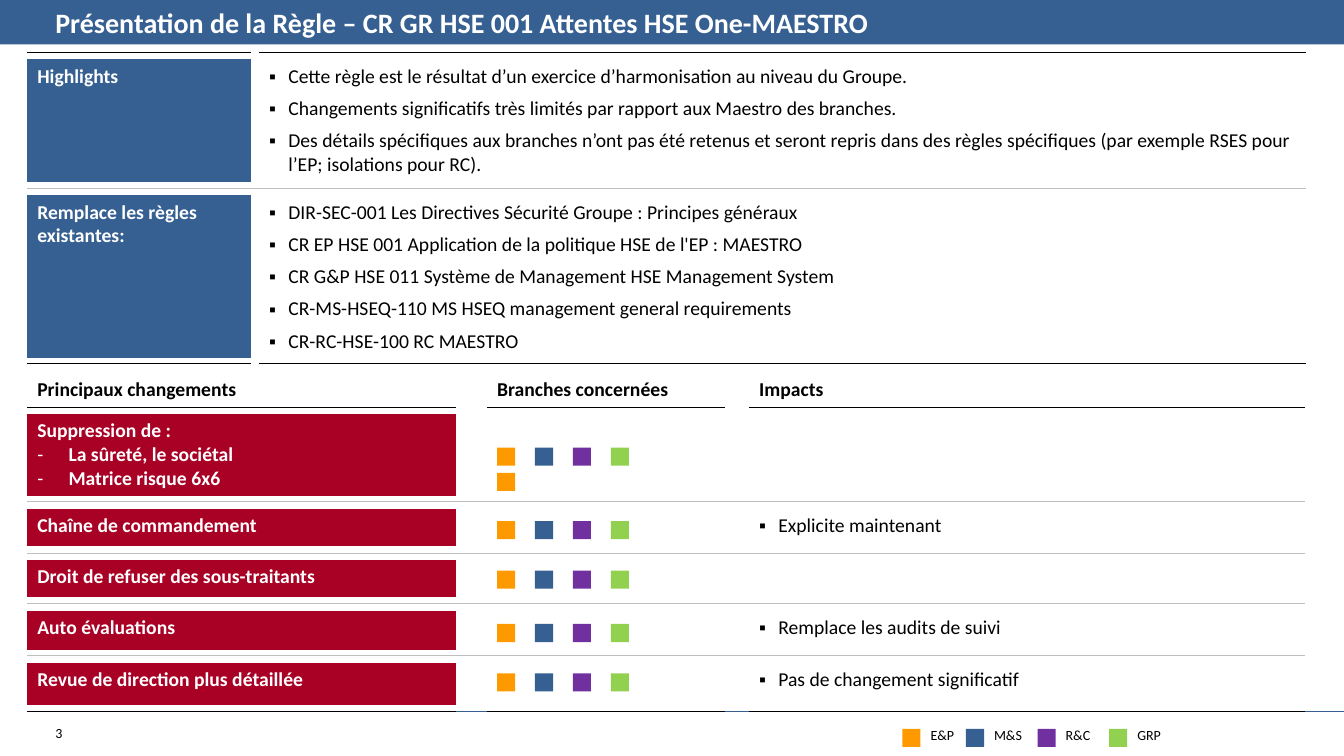
from dataclasses import dataclass, field

import pptx
import pptx.dml.color
import pptx.enum.shapes
import pptx.enum.text
import pptx.oxml.ns
import pptx.util
from lxml import etree

RGB = pptx.dml.color.RGBColor
ANCHOR = pptx.enum.text.MSO_ANCHOR
BLACK = RGB(0x00, 0x00, 0x00)
WHITE = RGB(0xFF, 0xFF, 0xFF)
GREY = RGB(0xBF, 0xBF, 0xBF)
BLUE = RGB(0x37, 0x60, 0x92)
RED = RGB(0xA9, 0x00, 0x25)
ORANGE = RGB(0xFF, 0x99, 0x00)
PURPLE = RGB(0x70, 0x30, 0xA0)
GREEN = RGB(0x92, 0xD0, 0x50)

FONT = "Calibri"
PLAIN_STYLE = "{2D5ABB26-0587-4C30-8999-92F81FD0307C}"
GRID_COLS, GRID_ROWS = 1333, 750
SLIDE_W, SLIDE_H = pptx.util.Inches(13.33), pptx.util.Inches(7.5)
SQUARE, SQUARE_PITCH, SQUARES_LEFT = 18, 37.6, 493
LABEL_OFFSET = 28


@dataclass(frozen=True)
class Bullet:
    indent: float
    space_after: float
    font: str


@dataclass(frozen=True)
class Entry:
    text: str
    fill: RGB | None = None
    color: RGB = BLACK
    bold: bool = False
    anchor: ANCHOR = ANCHOR.TOP


@dataclass(frozen=True)
class Rule:
    """A horizontal line above a row, over the given columns."""
    color: RGB
    cols: tuple[int, ...]


@dataclass
class Grid:
    left: float
    top: float
    cols: list[float]
    rows: list[float]
    entries: dict[tuple[int, int], Entry]
    rules: dict[int, Rule] = field(default_factory=dict)


@dataclass(frozen=True)
class Branch:
    name: str
    color: RGB
    legend_left: float
    label_width: float


BULLETS = {"-": Bullet(0.31, 0, FONT), "▪": Bullet(0.19, 6, "Arial")}

BRANCHES = [
    Branch("E&P", ORANGE, 895, 26),
    Branch("M&S", BLUE, 958, 30),
    Branch("R&C", PURPLE, 1029, 27),
    Branch("GRP", GREEN, 1100, 27),
]
BRANCH_ROWS = [444, 517, 566, 619, 668]


def heading(text: str, fill: RGB) -> Entry:
    return Entry(text, fill, WHITE, True)


def column_title(text: str) -> Entry:
    return Entry(text, bold=True, anchor=ANCHOR.BOTTOM)


OVERVIEW = Grid(
    27, 52, [222, 8, 1038], [7, 122, 6, 7, 161, 6],
    {
        (1, 0): heading("Highlights", BLUE),
        (1, 2): Entry(
            "▪ Cette règle est le résultat d’un exercice d’harmonisation au niveau du Groupe.\n"
            "▪ Changements significatifs très limités par rapport aux Maestro des branches.\n"
            "▪ Des détails spécifiques aux branches n’ont pas été retenus et seront repris "
            "dans des règles spécifiques (par exemple RSES pour l’EP; isolations pour RC)."),
        (4, 0): heading("Remplace les règles existantes:", BLUE),
        (4, 2): Entry(
            "▪ DIR-SEC-001 Les Directives Sécurité Groupe : Principes généraux\n"
            "▪ CR EP HSE 001 Application de la politique HSE de l'EP : MAESTRO\n"
            "▪ CR G&P HSE 011 Système de Management HSE Management System\n"
            "▪ CR-MS-HSEQ-110 MS HSEQ management general requirements\n"
            "▪ CR-RC-HSE-100 RC MAESTRO"),
    },
    {0: Rule(BLACK, (0, 2)), 3: Rule(GREY, (0, 1, 2)), 6: Rule(BLACK, (0, 2))},
)

CHANGES = Grid(
    27, 367, [425, 31, 236, 24, 551],
    [37, 7, 81, 6, 7, 37, 7, 7, 37, 6, 7, 39, 6, 7, 42, 6],
    {
        (0, 0): column_title("Principaux changements"),
        (0, 2): column_title("Branches concernées"),
        (0, 4): column_title("Impacts"),
        (2, 0): heading("Suppression de :\n- La sûreté, le sociétal\n- Matrice risque 6x6", RED),
        (5, 0): heading("Chaîne de commandement", RED),
        (5, 4): Entry("▪ Explicite maintenant"),
        (8, 0): heading("Droit de refuser des sous-traitants", RED),
        (11, 0): heading("Auto évaluations", RED),
        (11, 4): Entry("▪ Remplace les audits de suivi"),
        (14, 0): heading("Revue de direction plus détaillée", RED),
        (14, 4): Entry("▪ Pas de changement significatif"),
    },
    {edge: Rule(BLACK, (0, 2, 4)) for edge in (1, 16)}
    | {edge: Rule(GREY, tuple(range(5))) for edge in (4, 7, 10, 13)},
)


def across(n: float) -> int:
    return round(SLIDE_W * n / GRID_COLS)


def down(n: float) -> int:
    return round(SLIDE_H * n / GRID_ROWS)


def box(left: float, top: float, width: float, height: float) -> tuple[int, int, int, int]:
    return across(left), down(top), across(width), down(height)


def add_xml(parent, tag: str, **attrs: str):
    return etree.SubElement(parent, pptx.oxml.ns.qn(tag), attrs)


def write(tf, text: str, *, size: float = 14, color: RGB = BLACK, bold: bool = False) -> None:
    """Write one paragraph a line; a leading mark makes it a bullet."""
    for i, line in enumerate(text.split("\n")):
        p = tf.add_paragraph() if i else tf.paragraphs[0]
        mark, _, rest = line.partition(" ")
        if mark in BULLETS:
            bullet, line = BULLETS[mark], rest
            p.space_after = pptx.util.Pt(bullet.space_after)
            pPr = p._p.get_or_add_pPr()
            indent = pptx.util.Inches(bullet.indent)
            pPr.set("marL", str(indent))
            pPr.set("indent", str(-indent))
            add_xml(pPr, "a:buFont", typeface=bullet.font)
            add_xml(pPr, "a:buChar", char=mark)
        r = p.add_run()
        r.text = line
        r.font.name, r.font.size = FONT, pptx.util.Pt(size)
        r.font.bold, r.font.color.rgb = bold, color


def add_text(shapes, text: str, place: tuple[int, int, int, int], *, inset: bool = True,
             anchor: ANCHOR = ANCHOR.TOP, **style) -> None:
    tf = shapes.add_textbox(*place).text_frame
    tf.word_wrap, tf.vertical_anchor = True, anchor
    if not inset:
        tf.margin_left = tf.margin_right = tf.margin_top = tf.margin_bottom = 0
    write(tf, text, **style)


def add_rect(shapes, place: tuple[int, int, int, int], color: RGB) -> None:
    s = shapes.add_shape(pptx.enum.shapes.MSO_SHAPE.RECTANGLE, *place)
    s.shadow.inherit = False
    s.fill.solid()
    s.fill.fore_color.rgb = color
    s.line.fill.background()


def add_border(cell, tag: str, rule: Rule | None, col: int) -> None:
    ln = add_xml(cell._tc.get_or_add_tcPr(), tag, w=str(pptx.util.Pt(1)))
    if rule and col in rule.cols:
        add_xml(add_xml(ln, "a:solidFill"), "a:srgbClr", val=str(rule.color))
    else:
        add_xml(ln, "a:noFill")


def add_grid(shapes, grid: Grid) -> None:
    place = box(grid.left, grid.top, sum(grid.cols), sum(grid.rows))
    table = shapes.add_table(len(grid.rows), len(grid.cols), *place).table
    table.first_row = table.horz_banding = False
    table._tbl.tblPr.find(pptx.oxml.ns.qn("a:tableStyleId")).text = PLAIN_STYLE
    for c, width in enumerate(grid.cols):
        table.columns[c].width = across(width)
    for r, height in enumerate(grid.rows):
        table.rows[r].height = down(height)
        for c in range(len(grid.cols)):
            cell = table.cell(r, c)
            if r == 0:
                add_border(cell, "a:lnT", grid.rules.get(0), c)
            add_border(cell, "a:lnB", grid.rules.get(r + 1), c)
            entry = grid.entries.get((r, c))
            if entry is None:
                cell.fill.background()
                cell.margin_left = cell.margin_right = cell.margin_top = cell.margin_bottom = 0
                add_xml(cell.text_frame.paragraphs[0]._p, "a:endParaRPr", sz="100")
                continue
            if entry.fill is None:
                cell.fill.background()
            else:
                cell.fill.solid()
                cell.fill.fore_color.rgb = entry.fill
            cell.vertical_anchor = entry.anchor
            write(cell.text_frame, entry.text, color=entry.color, bold=entry.bold)


def add_footer(shapes) -> None:
    rule = shapes.add_connector(pptx.enum.shapes.MSO_CONNECTOR.STRAIGHT,
                                across(50), down(706), SLIDE_W, down(706))
    rule.line.color.rgb, rule.line.width = BLUE, pptx.util.Pt(0.75)
    add_xml(rule._element.spPr, "a:effectLst")
    add_text(shapes, "3", box(45, 714, 71, 27), size=10)


def add_legend(shapes) -> None:
    for branch in BRANCHES:
        group = shapes.add_group_shape().shapes
        add_rect(group, box(branch.legend_left, 723, SQUARE, SQUARE), branch.color)
        add_text(group, branch.name, box(branch.legend_left + LABEL_OFFSET, 721,
                                         branch.label_width, 17), inset=False, size=10)


def main() -> None:
    prs = pptx.Presentation()
    prs.slide_width, prs.slide_height = SLIDE_W, SLIDE_H
    shapes = prs.slides.add_slide(prs.slide_layouts[6]).shapes
    add_footer(shapes)
    add_rect(shapes, box(0, 0, GRID_COLS, 44), BLUE)
    add_grid(shapes, CHANGES)
    add_text(shapes, "Présentation de la Règle – CR GR HSE 001 Attentes HSE One-MAESTRO",
             box(45, 0, 1047, 44), anchor=ANCHOR.MIDDLE, size=20, color=WHITE, bold=True)
    add_grid(shapes, OVERVIEW)
    for top in BRANCH_ROWS:
        group = shapes.add_group_shape().shapes
        for i, branch in enumerate(BRANCHES):
            add_rect(group, box(SQUARES_LEFT + i * SQUARE_PITCH, top, SQUARE, SQUARE), branch.color)
    add_legend(shapes)
    add_rect(shapes, box(SQUARES_LEFT, 469, SQUARE, SQUARE), ORANGE)
    prs.save("out.pptx")


if __name__ == "__main__":
    main()
